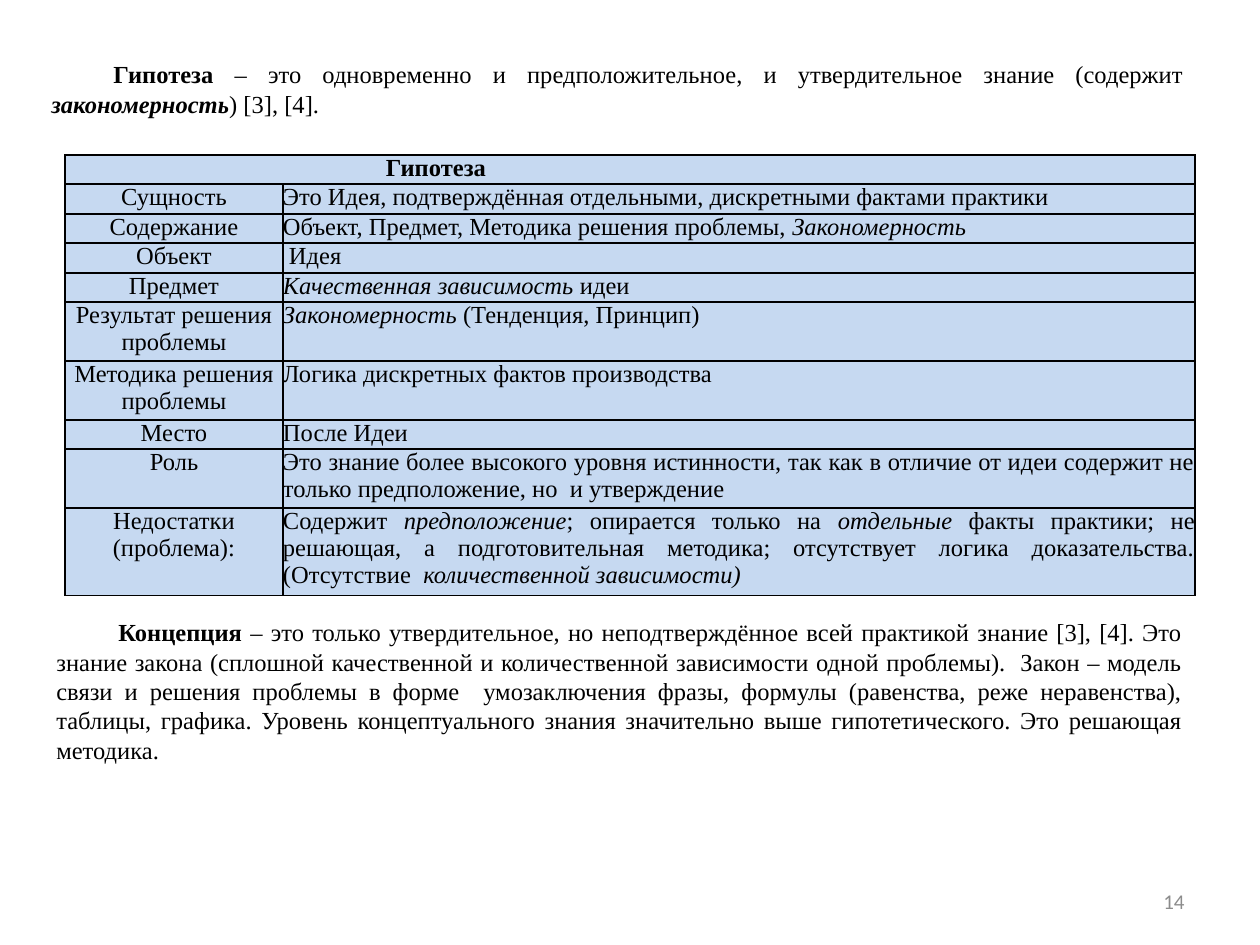
from dataclasses import dataclass

import pptx
import pptx.dml.color
import pptx.enum.text
import pptx.oxml
import pptx.oxml.ns
import pptx.util

PX = 914400 // 126
SERIF = "Times New Roman"
BLACK, GREY, PALE_BLUE = "000000", "8C8C8C", "C6D9F1"
ALIGN = pptx.enum.text.PP_ALIGN
ANCHOR = pptx.enum.text.MSO_ANCHOR
LINE_PITCH = 29.4


@dataclass(frozen=True)
class Span:
    text: str
    bold: bool = False
    italic: bool = False


@dataclass(frozen=True)
class Box:
    x: int
    y: int
    w: int
    h: int
    spans: list[Span]
    indent: int = 0
    align: ALIGN = ALIGN.JUSTIFY
    anchor: ANCHOR = ANCHOR.TOP
    font: str = SERIF
    size: int = 14
    color: str = BLACK


@dataclass(frozen=True)
class Row:
    label: str
    spans: list[Span]
    lines: int = 1
    indent: int = 0


BOXES = [
    Box(39, 53, 1157, 111, [
        Span("Гипотеза", bold=True),
        Span(" – это одновременно и предположительное, и утвердительное знание (содержит "),
        Span("закономерность", bold=True, italic=True),
        Span(") [3], [4]."),
    ], indent=62),
    Box(903, 876, 294, 50, [Span("14")], align=ALIGN.RIGHT, anchor=ANCHOR.MIDDLE,
        font="Calibri", size=12, color=GREY),
    Box(44, 611, 1151, 161, [
        Span("Концепция", bold=True),
        Span(" – это только утвердительное, но неподтверждённое всей практикой знание [3], [4]. "
             "Это знание закона (сплошной качественной и количественной зависимости одной "
             "проблемы).  Закон – модель связи и решения проблемы в форме  умозаключения фразы, "
             "формулы (равенства, реже неравенства), таблицы, графика. Уровень концептуального "
             "знания значительно выше гипотетического. Это решающая методика."),
    ], indent=62),
]

ROWS = [
    Row("Сущность", [Span("Это Идея, подтверждённая отдельными, дискретными фактами практики")]),
    Row("Содержание", [Span("Объект, Предмет, Методика решения проблемы, "),
                       Span("Закономерность", italic=True)]),
    Row("Объект", [Span("Идея")], indent=6),
    Row("Предмет", [Span("Качественная зависимость", italic=True), Span(" идеи")]),
    Row("Результат решения проблемы", [Span("Закономерность", italic=True),
                                       Span(" (Тенденция, Принцип)")], lines=2),
    Row("Методика решения проблемы", [Span("Логика дискретных фактов производства")], lines=2),
    Row("Место", [Span("После Идеи")]),
    Row("Роль", [Span("Это знание более высокого уровня истинности, так как в отличие от идеи "
                      "содержит не только предположение, но  и утверждение")], lines=2),
    Row("Недостатки (проблема):", [
        Span("Содержит "),
        Span("предположение", italic=True),
        Span("; опирается только на "),
        Span("отдельные", italic=True),
        Span(" факты практики; не решающая, а подготовительная методика; отсутствует логика "
             "доказательства. (Отсутствие  "),
        Span("количественной зависимости)", italic=True),
    ], lines=3),
]


def px(n: int) -> pptx.util.Emu:
    return pptx.util.Emu(n * PX)


def rgb(color: str) -> pptx.dml.color.RGBColor:
    return pptx.dml.color.RGBColor.from_string(color)


def write(tf, spans: list[Span], align: ALIGN, indent: int = 0, font: str = SERIF,
          size: int = 14, color: str = BLACK) -> None:
    p = tf.paragraphs[0]
    p.alignment = align
    if indent:
        pPr = p._p.get_or_add_pPr()
        pPr.set("marL", "0")
        pPr.set("indent", str(px(indent)))
    for span in spans:
        r = p.add_run()
        r.text = span.text
        r.font.name = font
        r.font.size = pptx.util.Pt(size)
        r.font.bold = span.bold
        r.font.italic = span.italic
        r.font.color.rgb = rgb(color)


def draw_box(slide, box: Box) -> None:
    sp = slide.shapes.add_textbox(px(box.x), px(box.y), px(box.w), px(box.h))
    tf = sp.text_frame
    tf.word_wrap = True
    tf.vertical_anchor = box.anchor
    write(tf, box.spans, box.align, box.indent, box.font, box.size, box.color)


def style_cell(cell) -> None:
    cell.margin_left = cell.margin_right = cell.margin_top = cell.margin_bottom = 0
    tcPr = cell._tc.get_or_add_tcPr()
    for side in ("lnL", "lnR", "lnT", "lnB"):
        tcPr.append(pptx.oxml.parse_xml(
            f'<a:{side} {pptx.oxml.ns.nsdecls("a")} w="12700"><a:solidFill>'
            f'<a:srgbClr val="{BLACK}"/></a:solidFill></a:{side}>'))
    cell.fill.solid()
    cell.fill.fore_color.rgb = rgb(PALE_BLUE)


def draw_table(slide, x: int, y: int, widths: tuple[int, int], rows: list[Row]) -> None:
    lines = [1] + [row.lines for row in rows]
    ends = [round(LINE_PITCH * sum(lines[:n])) for n in range(len(lines) + 1)]
    table = slide.shapes.add_table(len(lines), 2, px(x), px(y), px(sum(widths)),
                                   px(ends[-1])).table
    table.first_row = table.horz_banding = False
    for column, width in zip(table.columns, widths):
        column.width = px(width)
    for row, top, bottom in zip(table.rows, ends, ends[1:]):
        row.height = px(bottom - top)
    for cell in table.iter_cells():
        style_cell(cell)
    title = table.cell(0, 0)
    title.merge(table.cell(0, 1))
    title.margin_left = title.margin_right = px(9)
    write(title.text_frame, [Span("Гипотеза", bold=True)], ALIGN.JUSTIFY, indent=312)
    for n, row in enumerate(rows, 1):
        write(table.cell(n, 0).text_frame, [Span(row.label)], ALIGN.CENTER)
        write(table.cell(n, 1).text_frame, row.spans, ALIGN.JUSTIFY, row.indent)


def main() -> None:
    prs = pptx.Presentation()
    prs.slide_width, prs.slide_height = px(1260), px(945)
    slide = prs.slides.add_slide(prs.slide_layouts[6])
    draw_table(slide, 65, 155, (218, 912), ROWS)
    for box in BOXES:
        draw_box(slide, box)
    prs.save("out.pptx")


if __name__ == "__main__":
    main()
